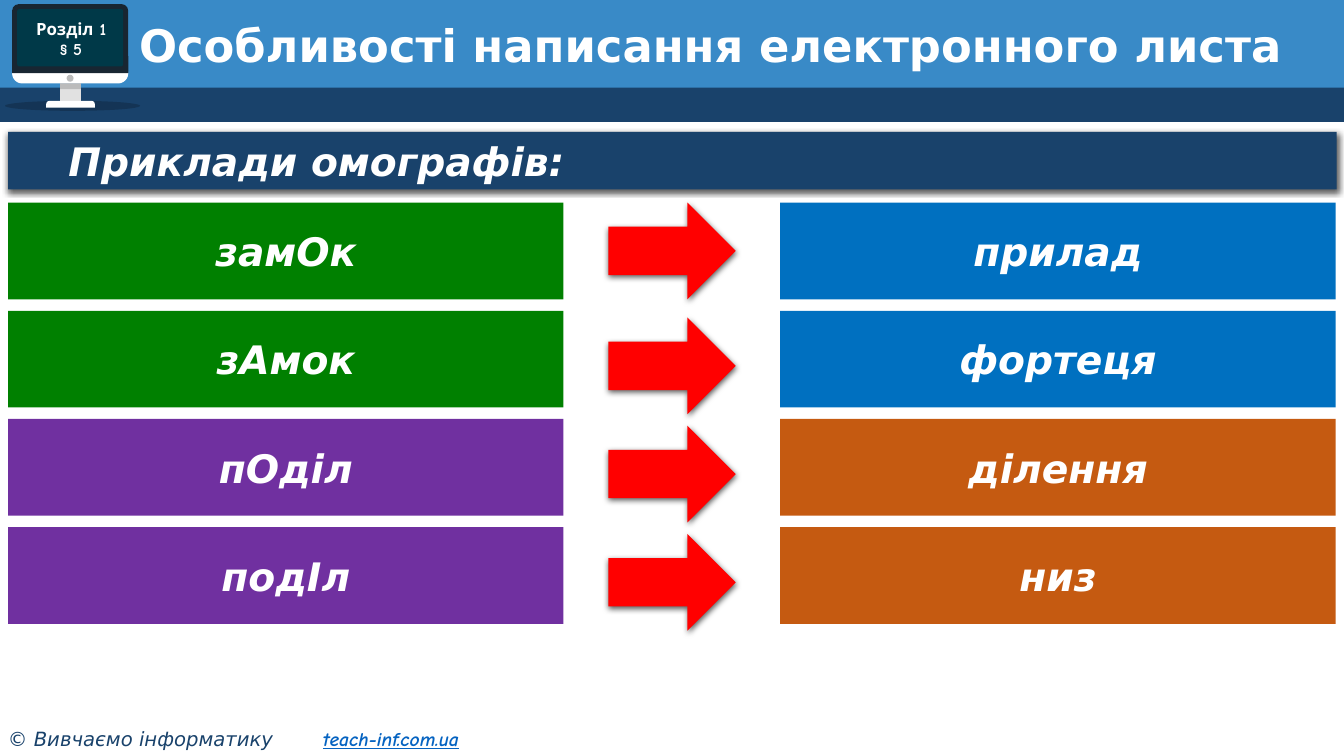
from lxml import etree
from pptx import Presentation
from pptx.dml.color import RGBColor
from pptx.enum.shapes import MSO_SHAPE
from pptx.enum.text import MSO_ANCHOR, PP_ALIGN
from pptx.oxml.ns import qn
from pptx.util import Pt

RECT, OVAL = MSO_SHAPE.RECTANGLE, MSO_SHAPE.OVAL
ROUND, TOPS = MSO_SHAPE.ROUNDED_RECTANGLE, MSO_SHAPE.ROUND_2_SAME_RECTANGLE
ARROW = MSO_SHAPE.RIGHT_ARROW
TOP, MIDDLE = MSO_ANCHOR.TOP, MSO_ANCHOR.MIDDLE
LEFT, CENTER, JUSTIFY = PP_ALIGN.LEFT, PP_ALIGN.CENTER, PP_ALIGN.JUSTIFY

# Content
TITLE = "Особливості написання електронного листа"
HEADING = "Приклади омографів:"
BADGE = ["Розділ 1", "§ 5"]
OWNER, SITE = "© Вивчаємо інформатику", "teach-inf.com.ua"
# word, meaning, word colour, meaning colour, arrow drop
PAIRS = [
    ("замОк", "прилад", "green", "blue", 0),
    ("зАмок", "фортеця", "green", "blue", 4.8),
    ("пОділ", "ділення", "purple", "orange", 4.8),
    ("подІл", "низ", "purple", "orange", 4.8),
]

# Theme
THEME = {
    "colors": {
        "sky": "398AC7", "navy": "19426B", "white": "FFFFFF", "black": "000000",
        "frame": "182632", "stand": "E1E1E1", "gray": "BBBBBB", "screen": "003948",
        "green": "008000", "blue": "0070C0", "purple": "7030A0",
        "orange": "C55A11", "red": "FF0000", "link": "0563C1",
    },
    "title": {"name": "DejaVu Sans", "size": Pt(32), "bold": True},
    "label": {"name": "DejaVu Sans", "size": Pt(28), "bold": True, "italic": True},
    "badge": {"name": "Comic Neue", "size": Pt(12), "bold": True},
    "owner": {"name": "DejaVu Sans", "size": Pt(14), "italic": True},
    "site": {"name": "Comic Neue", "size": Pt(14), "bold": True,
             "italic": True, "underline": True},
}

# Monitor parts: kind, box, colour, adjustments
MONITOR = [
    (OVAL, (3.6, 72, 96.5, 7.2), "black", ()),
    (ROUND, (8.64, 45, 83, 14.6), "white", (0.5,)),
    (TOPS, (8.64, 2.9, 83, 49.4), "frame", (0.1, 0)),
    (RECT, (43, 59.6, 14.9, 12.4), "stand", ()),
    (RECT, (43, 59.6, 14.9, 4), "gray", ()),
    (TOPS, (33, 72, 34.8, 5), "white", (0.5, 0)),
    (OVAL, (47.6, 53.4, 5, 5), "gray", ()),
    (ROUND, (12.3, 6.5, 75.6, 41), "screen", (0.036,)),
]


def tint(name):
    return RGBColor.from_string(THEME["colors"][name])


def style(font, kind, color):
    for key, value in THEME[kind].items():
        setattr(font, key, value)
    font.color.rgb = tint(color)


def draw(kind, box, color, turns=()):
    shape = slide.shapes.add_shape(kind, *map(Pt, box))
    shape.shadow.inherit = False
    shape.fill.solid()
    shape.fill.fore_color.rgb = tint(color)
    shape.line.fill.background()
    for i, value in enumerate(turns):
        shape.adjustments[i] = value
    return shape


def fade(node, share):
    etree.SubElement(node, qn("a:alpha"), val=str(share * 1000))


def shade(shape):
    effects = shape._element.spPr.find(qn("a:effectLst"))
    shadow = etree.SubElement(effects, qn("a:outerShdw"), blurRad=str(Pt(4.5)),
                              dist=str(Pt(1.5)), dir="5400000",
                              algn="ctr", rotWithShape="0")
    fade(etree.SubElement(shadow, qn("a:srgbClr"), val=THEME["colors"]["black"]), 63)


def write(shape, lines, kind, align=CENTER, anchor=MIDDLE):
    frame = shape.text_frame
    frame.word_wrap = True
    frame.vertical_anchor = anchor
    for i, line in enumerate(lines):
        para = frame.add_paragraph() if i else frame.paragraphs[0]
        para.alignment = align
        run = para.add_run()
        run.text = line
        style(run.font, kind, "white")
    return frame.paragraphs[0]


def note(box):
    return slide.shapes.add_textbox(*map(Pt, box))


deck = Presentation()
deck.slide_width, deck.slide_height = Pt(960), Pt(540)
slide = deck.slides.add_slide(deck.slide_layouts[6])

# Header bands and monitor
draw(RECT, (0, 0, 960, 65.5), "sky")
draw(RECT, (0, 62.6, 960, 24.5), "navy")
for i, part in enumerate(MONITOR):
    shape = draw(*part)
    if i == 0:
        fade(shape._element.spPr.find(".//" + qn("a:srgbClr")), 20)

# Footer
foot = note((-1.4, 515.5, 376.6, 24.5)).text_frame
foot.word_wrap = True
para = foot.paragraphs[0]
tabs = etree.SubElement(para._p.get_or_add_pPr(), qn("a:tabLst"))
etree.SubElement(tabs, qn("a:tab"), pos=str(Pt(225)), algn="l")
for words, kind, color in [(OWNER + "\t", "owner", "navy"), (SITE, "site", "link")]:
    run = para.add_run()
    run.text = words
    style(run.font, kind, color)

# Badge and title
write(note((9.4, 6.5, 82.8, 42.5)), BADGE, "badge")
write(note((92.2, 13, 843.8, 41.8)), [TITLE], "title", LEFT).line_spacing = 0.9

# Heading bar
EDGE, WIDE, HIGH = 5.8, 396.7, 69.1
bar = draw(RECT, (EDGE, 94.3, 949, 41), "navy")
shade(bar)
para = write(bar, [HEADING], "label", JUSTIFY, TOP)
para._p.get_or_add_pPr().set("indent", str(Pt(36)))

# Word pairs
START, STEP = 144.7, 77.3
for i, (word, sense, near, far, drop) in enumerate(PAIRS):
    top = START + i * STEP
    for left, words, color in [(EDGE, word, near), (557.3, sense, far)]:
        write(draw(RECT, (left, top, WIDE, HIGH), color), [words], "label")
    shade(draw(ARROW, (434.6, top + drop, 90.9, HIGH), "red"))

deck.save("out.pptx")
